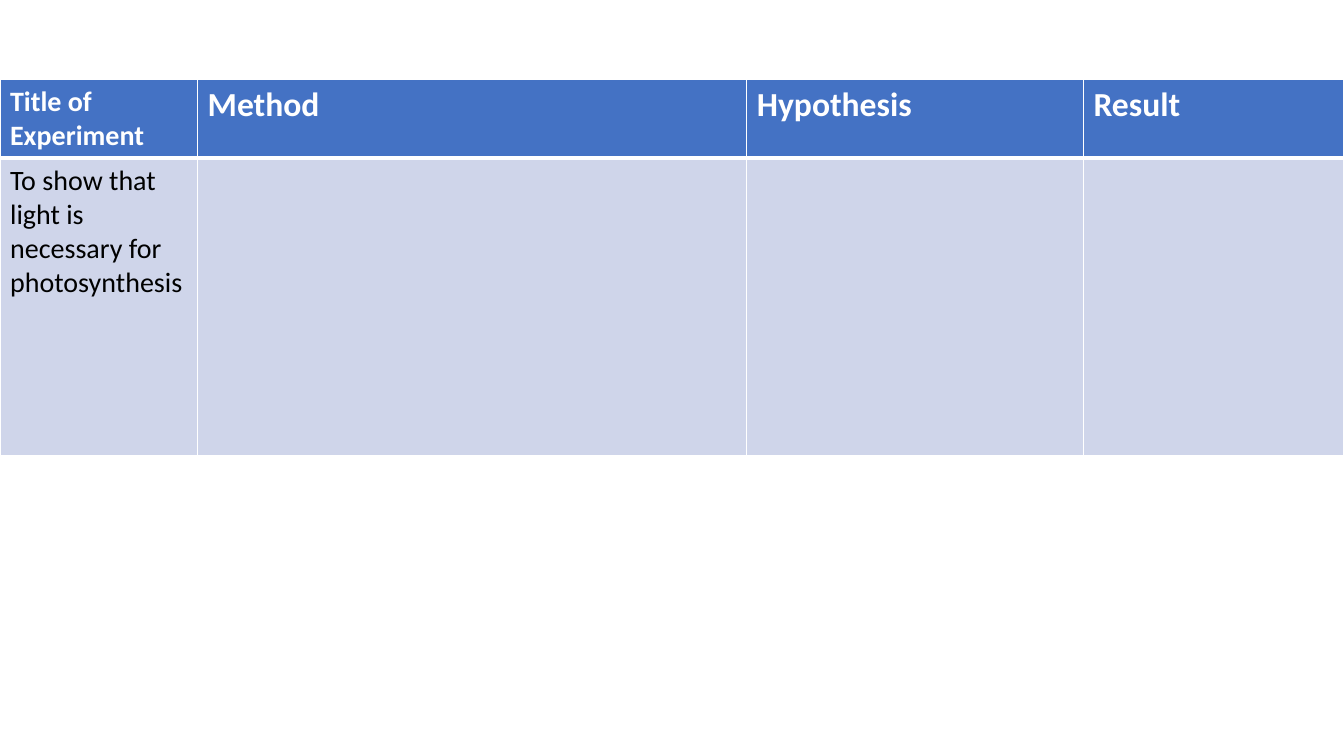
from dataclasses import dataclass

from lxml import etree
from pptx import Presentation, util as u
from pptx.dml.color import RGBColor
from pptx.oxml import ns


@dataclass(frozen=True)
class Theme:
    font: str = "Calibri"
    header_fill: str = "4472C4"
    body_fill: str = "CFD5EA"
    header_text: str = "FFFFFF"
    body_text: str = "000000"
    border: str = "FFFFFF"
    small: int = 20
    large: int = 24
    thin: int = 1
    thick: int = 3


class Deck:
    """Draws styled elements, with lengths as percentages of the slide."""

    def __init__(self, theme):
        self.theme = theme
        self.prs = Presentation()
        self.prs.slide_width = u.Inches(13.33)
        self.prs.slide_height = u.Inches(7.5)
        self.s = self.prs.slides.add_slide(self.prs.slide_layouts[6])

    def x(self, share):
        return round(self.prs.slide_width * share / 100)

    def y(self, share):
        return round(self.prs.slide_height * share / 100)

    def borders(self, cell, **widths):
        tc_pr = cell._tc.get_or_add_tcPr()
        for side in "LRTB":
            width = u.Pt(widths.get(side, self.theme.thin))
            ln = etree.SubElement(tc_pr, ns.qn(f"a:ln{side}"), w=str(width))
            fill = etree.SubElement(ln, ns.qn("a:solidFill"))
            etree.SubElement(fill, ns.qn("a:srgbClr"), val=self.theme.border)

    def cell(self, cell, content, header):
        t = self.theme
        self.borders(cell, **{"B" if header else "T": t.thick})
        cell.fill.solid()
        cell.fill.fore_color.rgb = RGBColor.from_string(t.header_fill if header else t.body_fill)
        if content:
            words, size = content
            r = cell.text_frame.paragraphs[0].add_run()
            r.text = words
            r.font.name = t.font
            r.font.size = u.Pt(size)
            r.font.bold = header
            r.font.color.rgb = RGBColor.from_string(t.header_text if header else t.body_text)

    def table(self, left, top, columns, rows, contents):
        frame = self.s.shapes.add_table(
            len(rows), len(columns), self.x(left), self.y(top),
            self.x(sum(columns)), self.y(sum(rows)))
        table = frame.table
        for column, share in zip(table.columns, columns):
            column.width = self.x(share)
        for i, (row, share) in enumerate(zip(table.rows, rows)):
            row.height = self.y(share)
            for cell, content in zip(row.cells, contents[i]):
                self.cell(cell, content, header=i == 0)


def main():
    theme = Theme()
    deck = Deck(theme)
    header = [("Title of Experiment", theme.small)]
    header += [(words, theme.large) for words in ("Method", "Hypothesis", "Result")]
    body = [("To show that light is necessary for photosynthesis", theme.small), None, None, None]
    deck.table(0, 10.53, [14.7, 40.87, 25.05, 19.38], [10.27, 39.33], [header, body])
    deck.prs.save("out.pptx")


if __name__ == "__main__":
    main()
